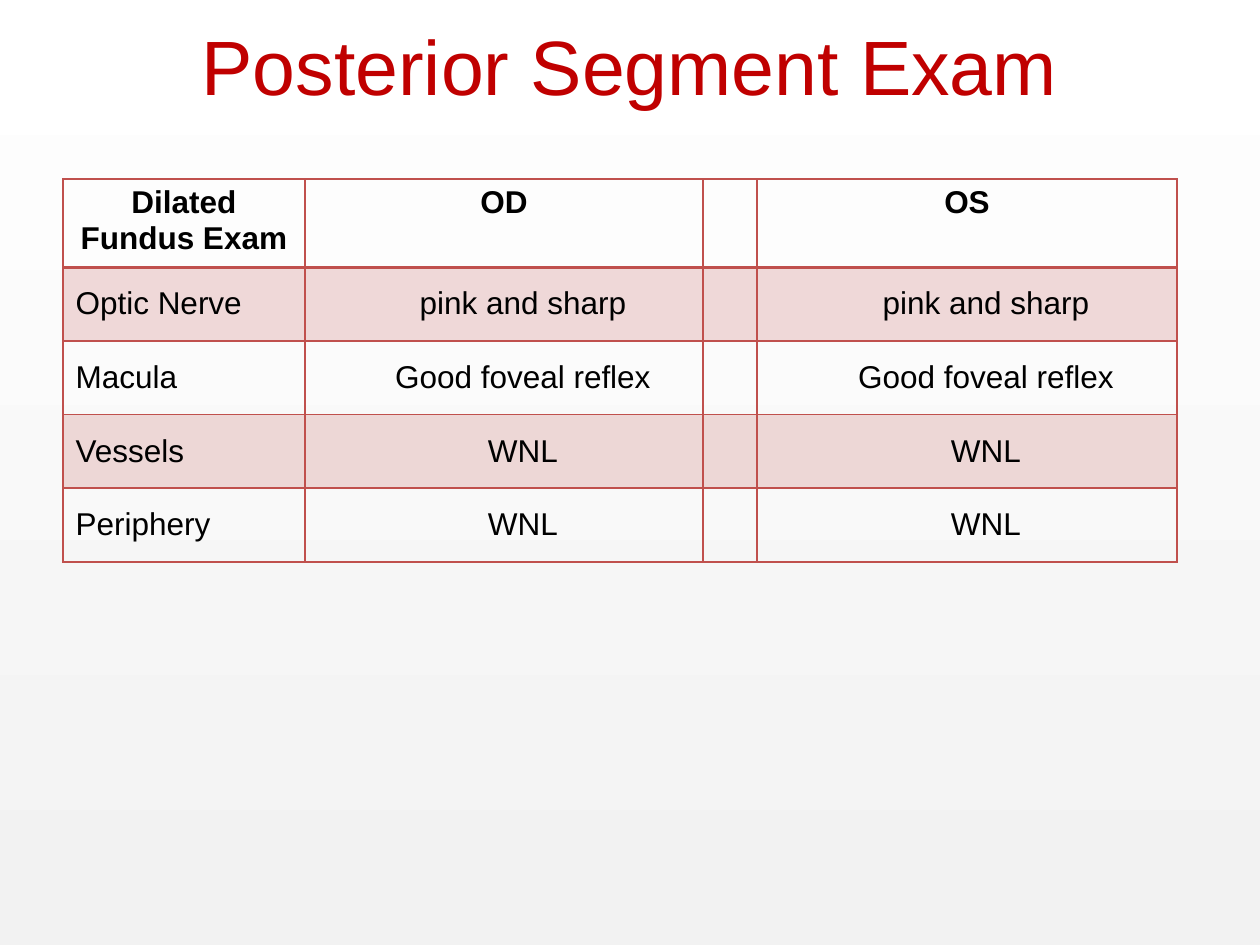
import pptx
import pptx.dml.color
import pptx.enum.shapes
import pptx.enum.text
import pptx.oxml
import pptx.oxml.ns
import pptx.util
from lxml import etree

Inches = pptx.util.Inches
Pt = pptx.util.Pt
ALIGN = pptx.enum.text.PP_ALIGN
ANCHOR = pptx.enum.text.MSO_ANCHOR

WIDTH, HEIGHT = 10, 7.5
ACCENT = "C0504D"
COLUMN_WIDTHS = [1.92, 3.16, 0.43, 3.33]
HEADER_HEIGHT = 0.66
ROWS = [
    ["Dilated Fundus Exam", "OD", "", "OS"],
    ["Optic Nerve", "pink and sharp", "", "pink and sharp"],
    ["Macula", "Good foveal reflex", "", "Good foveal reflex"],
    ["Vessels", "WNL", "", "WNL"],
    ["Periphery", "WNL", "", "WNL"],
]


def color(value):
    return pptx.dml.color.RGBColor.from_string(value)


def style_paragraph(paragraph, size, value, alignment, bold=False):
    paragraph.alignment = alignment
    font = paragraph.font
    font.name, font.size, font.bold = "Arial", Pt(size), bold
    font.color.rgb = color(value)


def add_background(slide, box):
    shape = slide.shapes.add_shape(
        pptx.enum.shapes.MSO_SHAPE.RECTANGLE, *map(Inches, box))
    shape.shadow.inherit = False
    shape.line.fill.background()
    shape.fill.gradient()
    shape.fill.gradient_angle = 90
    for stop, value in zip(shape.fill.gradient_stops, ["F2F2F2", "FFFFFF"]):
        stop.color.rgb = color(value)


def add_title(slide, box, text):
    frame = slide.shapes.add_textbox(*map(Inches, box)).text_frame
    frame.word_wrap = True
    frame.vertical_anchor = ANCHOR.MIDDLE
    frame.text = text
    style_paragraph(frame.paragraphs[0], 44, "C00000", ALIGN.CENTER)


def add_borders(cell, top, bottom):
    properties = cell._tc.get_or_add_tcPr()
    for side, width in zip("LRTB", [1, 1, top, bottom]):
        line = etree.SubElement(
            properties, pptx.oxml.ns.qn(f"a:ln{side}"), w=str(Pt(width)))
        fill = etree.SubElement(line, pptx.oxml.ns.qn("a:solidFill"))
        etree.SubElement(fill, pptx.oxml.ns.qn("a:srgbClr"), val=ACCENT)


def fill_cell(cell, shaded):
    """Tint a shaded cell with the accent at 20 % opacity."""
    if not shaded:
        cell.fill.background()
        return
    cell.fill.solid()
    cell.fill.fore_color.rgb = color(ACCENT)
    for accent in cell._tc.tcPr.findall(
            "/".join(map(pptx.oxml.ns.qn, ["a:solidFill", "a:srgbClr"]))):
        etree.SubElement(accent, pptx.oxml.ns.qn("a:alpha"), val="20000")


def add_exam_table(slide, box):
    table = slide.shapes.add_table(
        len(ROWS), len(COLUMN_WIDTHS), *map(Inches, box)).table
    table.first_row = table.horz_banding = False
    for column, width in zip(table.columns, COLUMN_WIDTHS):
        column.width = Inches(width)
    body_height = (box[3] - HEADER_HEIGHT) / (len(ROWS) - 1)
    for r, texts in enumerate(ROWS):
        header = r == 0
        table.rows[r].height = Inches(HEADER_HEIGHT if header else body_height)
        for c, text in enumerate(texts):
            cell = table.cell(r, c)
            cell.text = text
            label = c == 0 and not header
            style_paragraph(cell.text_frame.paragraphs[0], 18, "000000",
                            ALIGN.LEFT if label else ALIGN.CENTER, header)
            if not header:
                cell.vertical_anchor = ANCHOR.MIDDLE
                if text and not label:
                    cell.margin_left = Inches(0.4)
            add_borders(cell, top=2 if r == 1 else 1, bottom=2 if header else 1)
            fill_cell(cell, shaded=r % 2 == 1)


def main():
    presentation = pptx.Presentation()
    presentation.slide_width = Inches(WIDTH)
    presentation.slide_height = Inches(HEIGHT)
    slide = presentation.slides.add_slide(presentation.slide_layouts[6])
    add_background(slide, (0, 0, WIDTH, HEIGHT))
    add_title(slide, (0.05 * WIDTH, -0.11, 0.9 * WIDTH, HEIGHT / 6),
              "Posterior Segment Exam")
    add_exam_table(slide, (0.05 * WIDTH, 1.42, sum(COLUMN_WIDTHS), 0.4 * HEIGHT))
    presentation.save("out.pptx")


if __name__ == "__main__":
    main()
